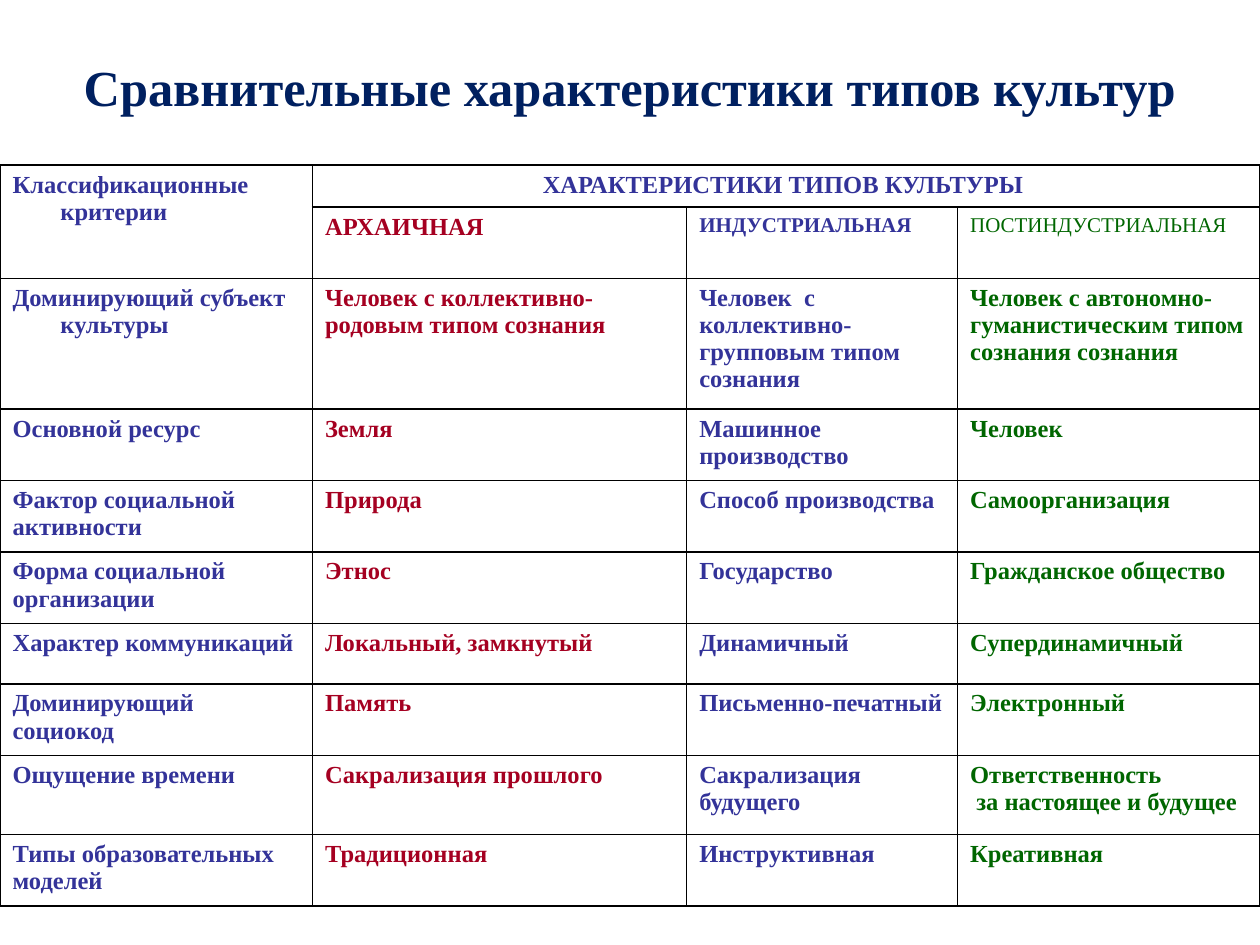
from lxml.etree import SubElement
from pptx import Presentation
from pptx.dml.color import RGBColor
from pptx.enum.text import MSO_ANCHOR, PP_ALIGN
from pptx.oxml.ns import qn
from pptx.util import Inches, Pt

BLUE, RED, GREEN, NAVY, BLACK = "333399", "A50021", "006600", "002060", "000000"
COLUMN_COLORS = [BLUE, RED, BLUE, GREEN]
COLUMN_WIDTHS = [2.48, 2.97, 2.15, 2.4]
ROW_HEIGHTS = [0.31, 0.28, 0.67, 0.48, 0.48, 0.48, 0.48, 0.48, 0.63, 0.48]
CRITERIA_HEADING = "Классификационные критерии"
SUBJECT = "Доминирующий субъект культуры"
HANGING = {CRITERIA_HEADING, SUBJECT}
TYPE_FORMATS = {
    "ИНДУСТРИАЛЬНАЯ": {"size": 12},
    "ПОСТИНДУСТРИАЛЬНАЯ": {"size": 12, "bold": False},
}
ROWS = [
    [CRITERIA_HEADING, "ХАРАКТЕРИСТИКИ ТИПОВ КУЛЬТУРЫ ", "", ""],
    ["", "АРХАИЧНАЯ", "ИНДУСТРИАЛЬНАЯ", "ПОСТИНДУСТРИАЛЬНАЯ"],
    [SUBJECT, "Человек с коллективно-родовым типом сознания",
     "Человек  с\nколлективно-групповым типом сознания",
     "Человек с автономно-гуманистическим типом сознания сознания"],
    ["Основной ресурс", "Земля", "Машинное производство", "Человек"],
    ["Фактор социальной активности", "Природа", "Способ производства",
     "Самоорганизация"],
    ["Форма социальной организации", "Этнос", "Государство",
     "Гражданское общество"],
    ["Характер коммуникаций", "Локальный, замкнутый", "Динамичный",
     "Супердинамичный"],
    ["Доминирующий социокод", "Память", "Письменно-печатный", "Электронный"],
    ["Ощущение времени", "Сакрализация прошлого", "Сакрализация будущего",
     "Ответственность\n за настоящее и будущее"],
    ["Типы образовательных моделей", "Традиционная", "Инструктивная",
     "Креативная"],
]


def rgb(color):
    """Turn a hex string into a colour."""
    return RGBColor.from_string(color)


def write(frame, text, size=14, color=BLUE, bold=True, align=PP_ALIGN.LEFT,
          hanging=0):
    """Fill a text frame with one formatted paragraph per line of text."""
    frame.word_wrap = True
    for index, line in enumerate(text.split("\n")):
        paragraph = frame.paragraphs[0] if index == 0 else frame.add_paragraph()
        paragraph.alignment = align
        if hanging:
            properties = paragraph._p.get_or_add_pPr()
            properties.set("marL", str(Inches(hanging)))
            properties.set("indent", str(-Inches(hanging)))
        run = paragraph.add_run()
        run.text = line
        run.font.name = "Times New Roman"
        run.font.size = Pt(size)
        run.font.bold = bold
        run.font.color.rgb = rgb(color)


def outline(cell):
    """Draw a thin black border on every side of a cell."""
    properties = cell._tc.get_or_add_tcPr()
    for position, side in enumerate(("lnL", "lnR", "lnT", "lnB")):
        border = SubElement(properties, qn(f"a:{side}"), w=str(Pt(1)))
        fill = SubElement(border, qn("a:solidFill"))
        SubElement(fill, qn("a:srgbClr"), val=BLACK)
        properties.insert(position, border)


def add_heading(slide, left, top, width, height):
    """Place the slide heading in the given box."""
    frame = slide.shapes.add_textbox(left, top, width, height).text_frame
    frame.vertical_anchor = MSO_ANCHOR.MIDDLE
    write(frame, "Сравнительные характеристики типов культур", size=28.8,
          color=NAVY, align=PP_ALIGN.CENTER)


def add_comparison(slide, left, top, width, height):
    """Place the table of culture types in the given box."""
    comparison = slide.shapes.add_table(len(ROWS), len(COLUMN_WIDTHS), left, top,
                                        width, height)
    table = comparison.table
    table.first_row = table.horz_banding = False
    for column, column_width in zip(table.columns, COLUMN_WIDTHS):
        column.width = Inches(column_width)
    for row, row_height in zip(table.rows, ROW_HEIGHTS):
        row.height = Inches(row_height)
    comparison.height = height
    table.cell(0, 0).merge(table.cell(1, 0))
    table.cell(0, 1).merge(table.cell(0, 3))
    for row_index, texts in enumerate(ROWS):
        for column_index, text in enumerate(texts):
            cell = table.cell(row_index, column_index)
            cell.fill.background()
            outline(cell)
            if not text:
                continue
            spans_types = cell.span_width > 1
            write(cell.text_frame, text,
                  color=BLUE if spans_types else COLUMN_COLORS[column_index],
                  align=PP_ALIGN.CENTER if spans_types else PP_ALIGN.LEFT,
                  hanging=0.38 if text in HANGING else 0,
                  **TYPE_FORMATS.get(text, {}))


def main():
    """Build and save the slide."""
    presentation = Presentation()
    presentation.slide_width = Inches(10)
    presentation.slide_height = Inches(7.5)
    slide = presentation.slides.add_slide(presentation.slide_layouts[6])
    add_heading(slide, Inches(0.5), Inches(0.3), Inches(9), Inches(0.77))
    add_comparison(slide, Inches(0), Inches(1.31), Inches(10), Inches(5.87))
    presentation.save("out.pptx")


if __name__ == "__main__":
    main()
